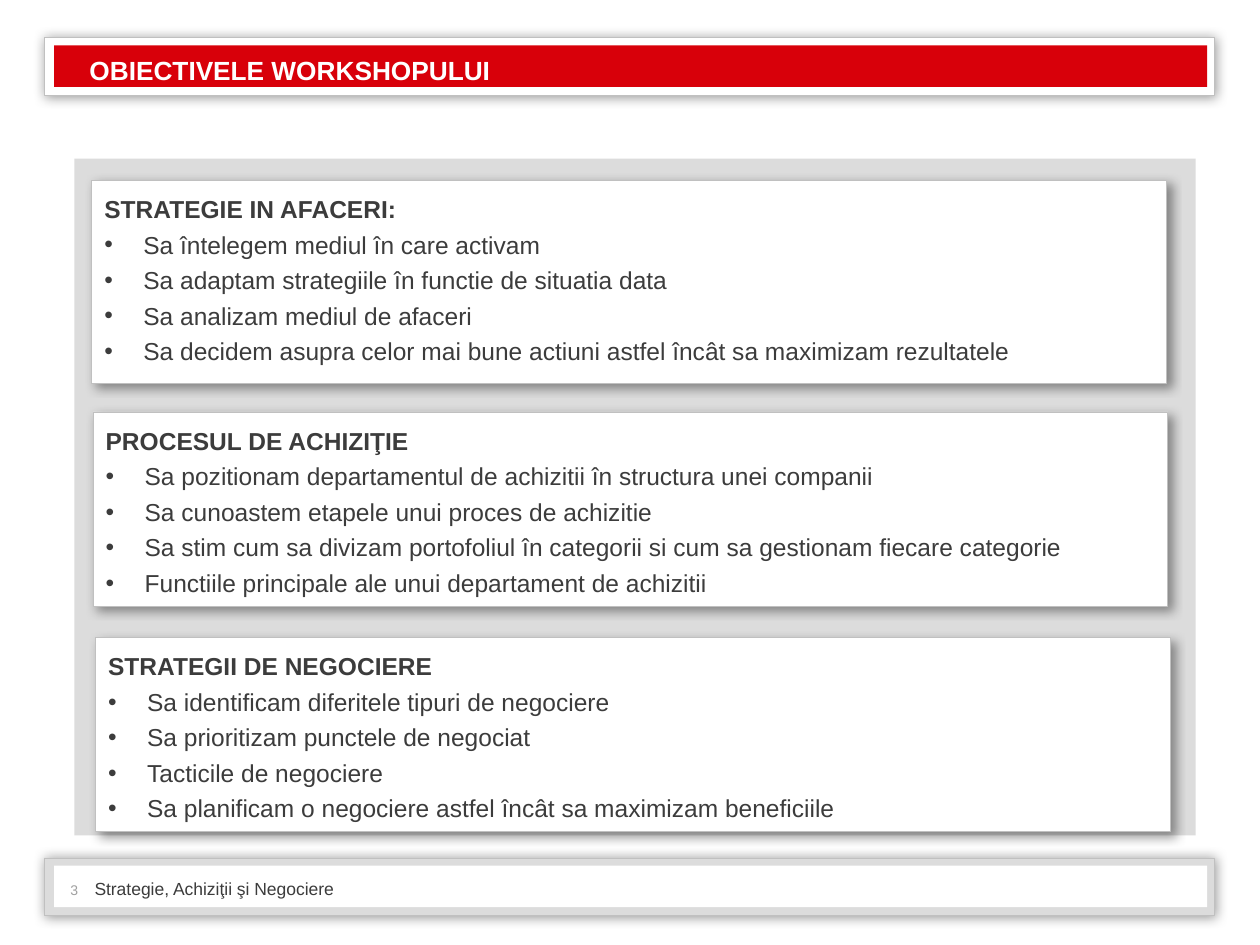
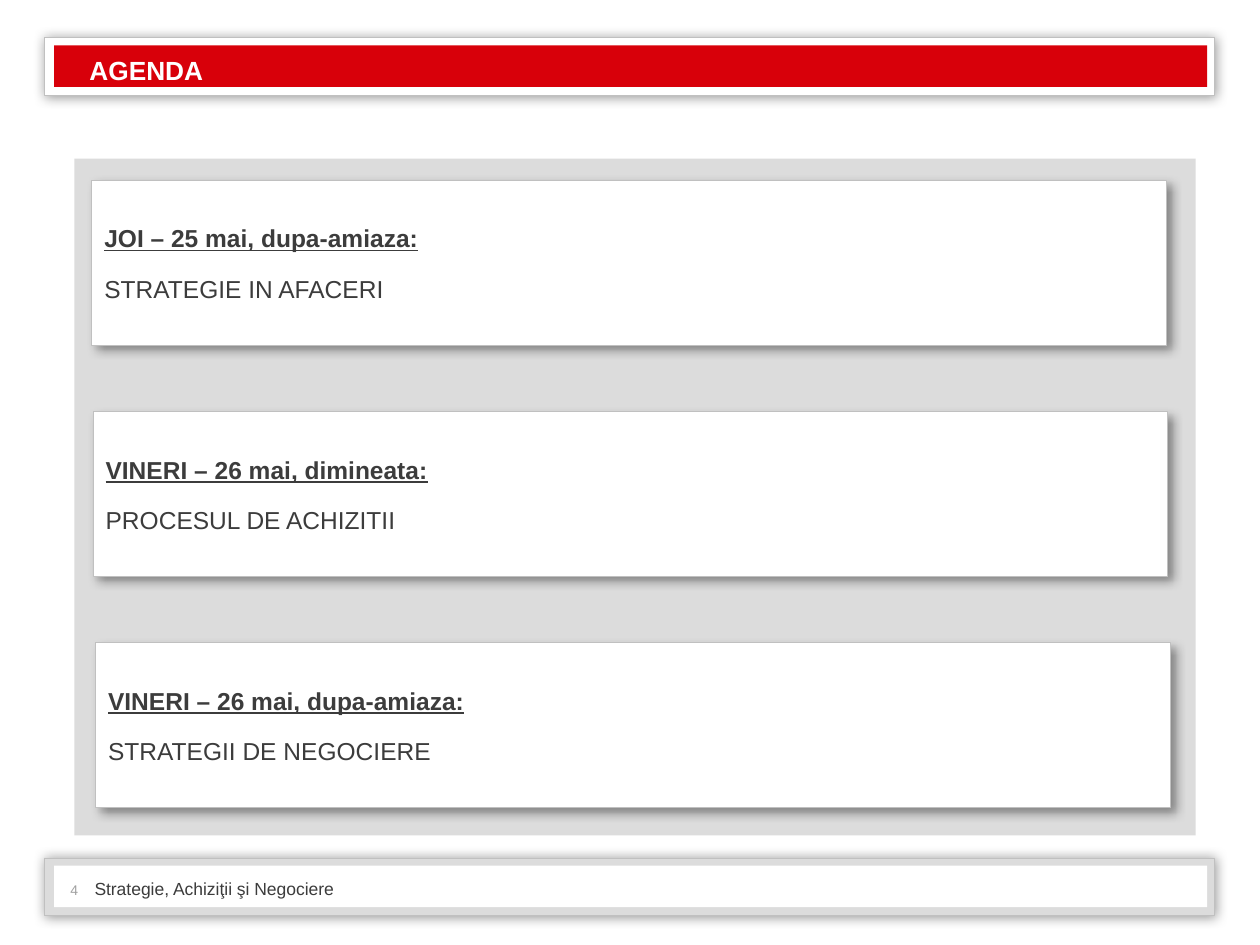
from collections import namedtuple
from dataclasses import dataclass

from lxml.etree import SubElement as Sub
from pptx import Presentation
from pptx.dml.color import RGBColor as RGB
from pptx.enum.shapes import MSO_SHAPE as Shape
from pptx.enum.text import MSO_ANCHOR as Anchor, PP_ALIGN as Align
from pptx.oxml.ns import qn
from pptx.util import Inches, Pt


@dataclass(frozen=True)
class Theme:
    font: str = "Arial"
    red: str = "D8000A"
    gray: str = "DCDCDC"
    edge: str = "C0C0C0"
    ink: str = "3C3C3C"
    pale: str = "A0A0A0"
    white: str = "FFFFFF"
    title: float = 15
    body: float = 14
    foot: float = 10
    page: float = 8
    gap: float = 3.5


T = Theme()
Box = namedtuple("Box", "x y w h")
Glow = namedtuple("Glow", "blur dist angle")

HEAD = Box(0.35, 0.3, 9.29, 0.46)
FOOT = Box(0.35, 6.81, 9.29, 0.46)
PANEL = Box(0.59, 1.26, 8.9, 5.37)
HALO = Glow(7, 0, 0)
DROP = Glow(6, 3, 45)
CARD_X = (0.14, 0.15, 0.17)  # card offsets from the panel's left side
CARD_W = 8.53


def inner(box, x, y, w, h):
    """Box placed relative to the corner of another."""
    return Box(box.x + x, box.y + y, w, h)


def place(box):
    return [Inches(n) for n in box]


def rect(slide, box, fill, glow=None):
    """Flat rectangle; one with a glow also gets a thin edge."""
    shape = slide.shapes.add_shape(Shape.RECTANGLE, *place(box))
    shape.shadow.inherit = False
    shape.fill.solid()
    shape.fill.fore_color.rgb = RGB.from_string(fill)
    if not glow:
        shape.line.fill.background()
        return shape
    shape.line.color.rgb = RGB.from_string(T.edge)
    shape.line.width = Pt(0.5)
    fx = shape._element.spPr.find(qn("a:effectLst"))
    cast = Sub(fx, qn("a:outerShdw"), blurRad=str(Pt(glow.blur)),
               dist=str(Pt(glow.dist)), dir=str(glow.angle * 60000),
               algn="ctr", rotWithShape="0")
    tint = Sub(cast, qn("a:srgbClr"), val="000000")
    Sub(tint, qn("a:alpha"), val="40000")
    return shape


def frame(shape, left=0, top=0, right=0, anchor=Anchor.TOP):
    """Text frame with wrapping, insets and anchor set."""
    text = shape.text_frame
    text.word_wrap = True
    text.margin_left, text.margin_top = Inches(left), Inches(top)
    text.margin_right, text.margin_bottom = Inches(right), 0
    text.vertical_anchor = anchor
    return text


def write(para, words, size, color, bold=False, under=False):
    run = para.add_run()
    run.text = words
    font = run.font
    font.name, font.size = T.font, Pt(size)
    font.bold, font.underline = bold, under
    font.color.rgb = RGB.from_string(color)


def label(slide, box, words, size, color, bold=False, top=0,
          anchor=Anchor.MIDDLE, align=Align.LEFT):
    shape = slide.shapes.add_textbox(*place(box))
    para = frame(shape, top=top, anchor=anchor).paragraphs[0]
    para.alignment = align
    write(para, words, size, color, bold)


def band(slide, box, outer, core):
    """Framed strip with a soft halo."""
    rect(slide, box, outer, HALO)
    rect(slide, inner(box, 0.08, 0.06, 9.15, 0.33), core)


def header(slide, box, title):
    band(slide, box, T.white, T.red)
    label(slide, inner(box, 0.36, 0.11, 8.58, 0.24), title, T.title,
          T.white, bold=True, top=0.02, anchor=Anchor.TOP)


def footer(slide, box, page):
    band(slide, box, T.gray, T.white)
    label(slide, inner(box, 0.12, 0.12, 0.24, 0.24), str(page), T.page,
          T.pale, top=0.02, align=Align.CENTER)
    label(slide, inner(box, 0.4, 0.12, 6.69, 0.24),
          "Strategie, Achiziţii şi Negociere", T.foot, T.ink)


def indent(para, size, mark=None):
    """Hanging indent, with a bullet if one is given."""
    props = para._p.get_or_add_pPr()
    props.set("marL", str(Inches(size)))
    props.set("indent", str(-Inches(size)))
    if mark:
        Sub(props, qn("a:buFont"), typeface=T.font)
        Sub(props, qn("a:buChar"), char=mark)


def card(slide, box, head, lines, plan):
    """White card: bold heading, then bulleted or plain lines."""
    text = frame(rect(slide, box, T.white, DROP), 0.1, 0.11, 0.04)
    for i, words in enumerate([head, *lines]):
        first = i == 0
        para = text.paragraphs[0] if first else text.add_paragraph()
        if plan or first:
            indent(para, 0.2)
        else:
            indent(para, 0.31, "•")
        para.alignment = Align.LEFT
        if not first:
            para.space_before = Pt(T.gap)
        if plan:
            para.line_spacing = 2.0 if first else 1.5
        write(para, words, T.body, T.ink, first, first and plan)


def panel(slide, box, cards, tops, highs, plan):
    rect(slide, box, T.gray)
    for (head, *lines), x, y, h in zip(cards, CARD_X, tops, highs):
        card(slide, inner(box, x, y, CARD_W, h), head, lines, plan)


def build(deck, page, title, cards, tops, highs, plan=False):
    slide = deck.slides.add_slide(deck.slide_layouts[6])
    header(slide, HEAD, title)
    footer(slide, FOOT, page)
    panel(slide, PANEL, cards, tops, highs, plan)


GOALS = [
    ("STRATEGIE IN AFACERI:",
     "Sa întelegem mediul în care activam",
     "Sa adaptam strategiile în functie de situatia data",
     "Sa analizam mediul de afaceri",
     "Sa decidem asupra celor mai bune actiuni astfel încât sa maximizam "
     "rezultatele"),
    ("PROCESUL DE ACHIZIŢIE",
     "Sa pozitionam departamentul de achizitii în structura unei companii",
     "Sa cunoastem etapele unui proces de achizitie",
     "Sa stim cum sa divizam portofoliul în categorii si cum sa gestionam "
     "fiecare categorie",
     "Functiile principale ale unui departament de achizitii"),
    ("STRATEGII DE NEGOCIERE",
     "Sa identificam diferitele tipuri de negociere",
     "Sa prioritizam punctele de negociat",
     "Tacticile de negociere",
     "Sa planificam o negociere astfel încât sa maximizam beneficiile"),
]
DAYS = [
    ("JOI – 25 mai, dupa-amiaza:", "STRATEGIE IN AFACERI"),
    ("VINERI – 26 mai, dimineata:", "PROCESUL DE ACHIZITII"),
    ("VINERI – 26 mai, dupa-amiaza:", "STRATEGII DE NEGOCIERE"),
]


def main():
    deck = Presentation()
    deck.slide_width, deck.slide_height = Inches(10), Inches(7.5)
    build(deck, 3, "OBIECTIVELE WORKSHOPULUI", GOALS,
          (0.17, 2.01, 3.8), (1.61, 1.54, 1.54))
    build(deck, 4, "AGENDA", DAYS,
          [0.17 + 1.835 * i for i in range(3)], [1.31] * 3, plan=True)
    deck.save("out.pptx")


if __name__ == "__main__":
    main()
